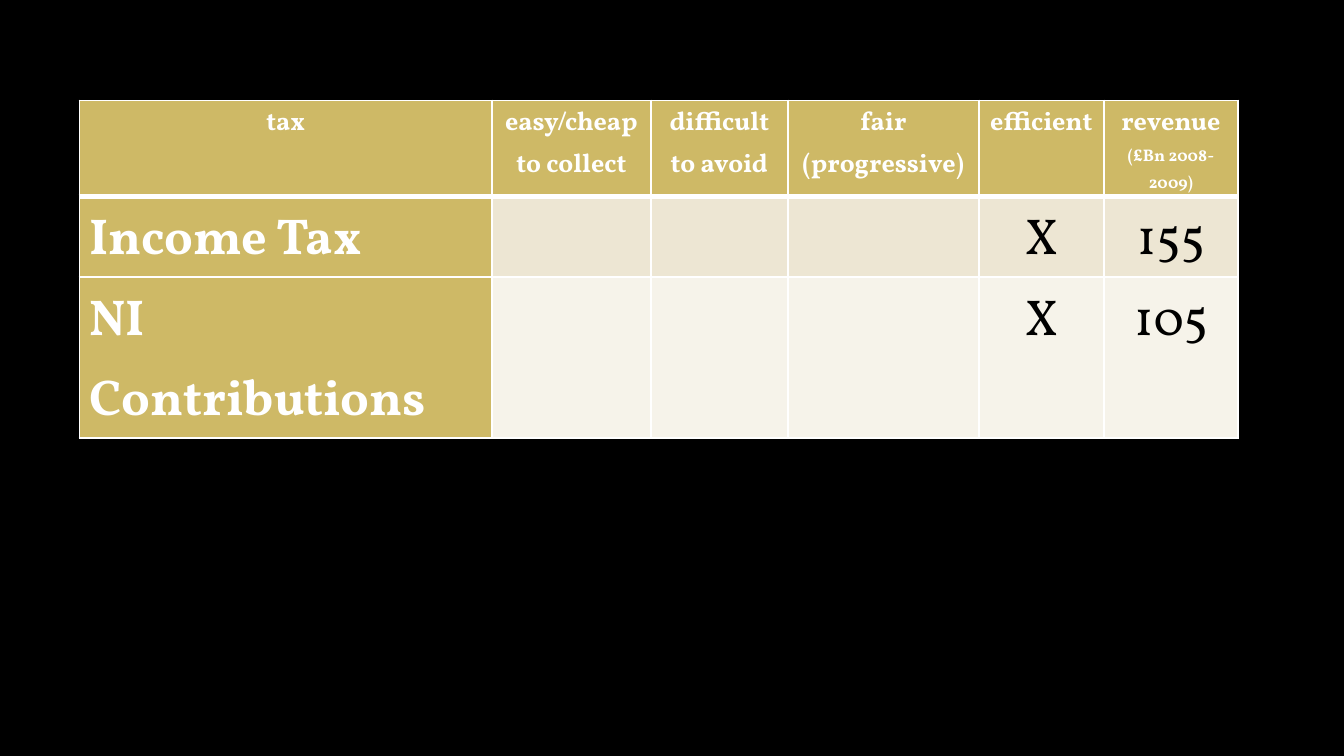
"""Build a slide with a table that compares taxes."""
from lxml import etree
from pptx import Presentation
from pptx.dml.color import RGBColor
from pptx.enum.text import PP_ALIGN
from pptx.oxml.ns import qn
from pptx.util import Cm, Pt

LEFT, CENTER = PP_ALIGN.LEFT, PP_ALIGN.CENTER
BLACK = RGBColor(0x00, 0x00, 0x00)
WHITE = RGBColor(0xFF, 0xFF, 0xFF)
GOLD = RGBColor(0xCE, 0xB9, 0x66)
SAND = RGBColor(0xED, 0xE6, 0xD3)
CREAM = RGBColor(0xF6, 0xF3, 0xEA)

COLUMN_WIDTHS = [7.8, 3, 2.59, 3.61, 2.36, 2.54]
ROW_HEIGHTS = [1.6, 1.52, 2.62]
HEADERS = [
    [("tax", 14)],
    [("easy/cheap to collect", 14)],
    [("difficult to avoid", 14)],
    [("fair (progressive)", 14)],
    [("efficient", 14)],
    [("revenue", 14), ("(£Bn 2008-2009)", 9)],
]
TAXES = [
    (["Income Tax", "", "", "", "X", "155"], SAND),
    (["NI Contributions", "", "", "", "X", "105"], CREAM),
]


class TaxSlide:
    def __init__(self, slide, font="Vollkorn", line_spacing=1.15):
        self.slide = slide
        self.font = font
        self.line_spacing = line_spacing

    def background(self, color):
        fill = self.slide.background.fill
        fill.solid()
        fill.fore_color.rgb = color

    def table(self, left, top, widths, heights):
        frame = self.slide.shapes.add_table(
            len(heights), len(widths), Cm(left), Cm(top),
            Cm(sum(widths)), Cm(sum(heights)))
        table = frame.table
        for column, width in zip(table.columns, widths):
            column.width = Cm(width)
        for row, height in zip(table.rows, heights):
            row.height = Cm(height)
        return table

    def border(self, cell, side, points):
        properties = cell._tc.get_or_add_tcPr()
        line = etree.SubElement(properties, qn(f"a:ln{side}"), w=str(Pt(points)))
        fill = etree.SubElement(line, qn("a:solidFill"))
        etree.SubElement(fill, qn("a:srgbClr"), val=str(WHITE))

    def cell(self, cell, lines, fill, color, bold, alignment, top=1, bottom=1):
        for side, points in (("L", 1), ("R", 1), ("T", top), ("B", bottom)):
            self.border(cell, side, points)
        cell.fill.solid()
        cell.fill.fore_color.rgb = fill
        cell.margin_left = cell.margin_right = Cm(0.19)
        cell.margin_top = cell.margin_bottom = 0
        for index, (text, size) in enumerate(lines):
            frame = cell.text_frame
            paragraph = frame.add_paragraph() if index else frame.paragraphs[0]
            paragraph.alignment = alignment
            paragraph.line_spacing = self.line_spacing
            run = paragraph.add_run()
            run.text = text
            run.font.name = self.font
            run.font.size = Pt(size)
            run.font.bold = bold
            run.font.color.rgb = color


def main():
    presentation = Presentation()
    presentation.slide_width = Cm(25.4)
    presentation.slide_height = Cm(14.29)
    slide = presentation.slides.add_slide(presentation.slide_layouts[6])
    tax_slide = TaxSlide(slide)
    tax_slide.background(BLACK)
    table = tax_slide.table(1.5, 1.9, COLUMN_WIDTHS, ROW_HEIGHTS)

    for column, lines in enumerate(HEADERS):
        tax_slide.cell(table.cell(0, column), lines, GOLD, WHITE, True, CENTER,
                       bottom=3)
    for row, (texts, band) in enumerate(TAXES, start=1):
        for column, text in enumerate(texts):
            lines = [(text, 27)] if text else []
            style = ((band, BLACK, False, CENTER) if column
                     else (GOLD, WHITE, True, LEFT))
            tax_slide.cell(table.cell(row, column), lines, *style,
                           top=3 if row == 1 else 1)

    presentation.save("out.pptx")


if __name__ == "__main__":
    main()
